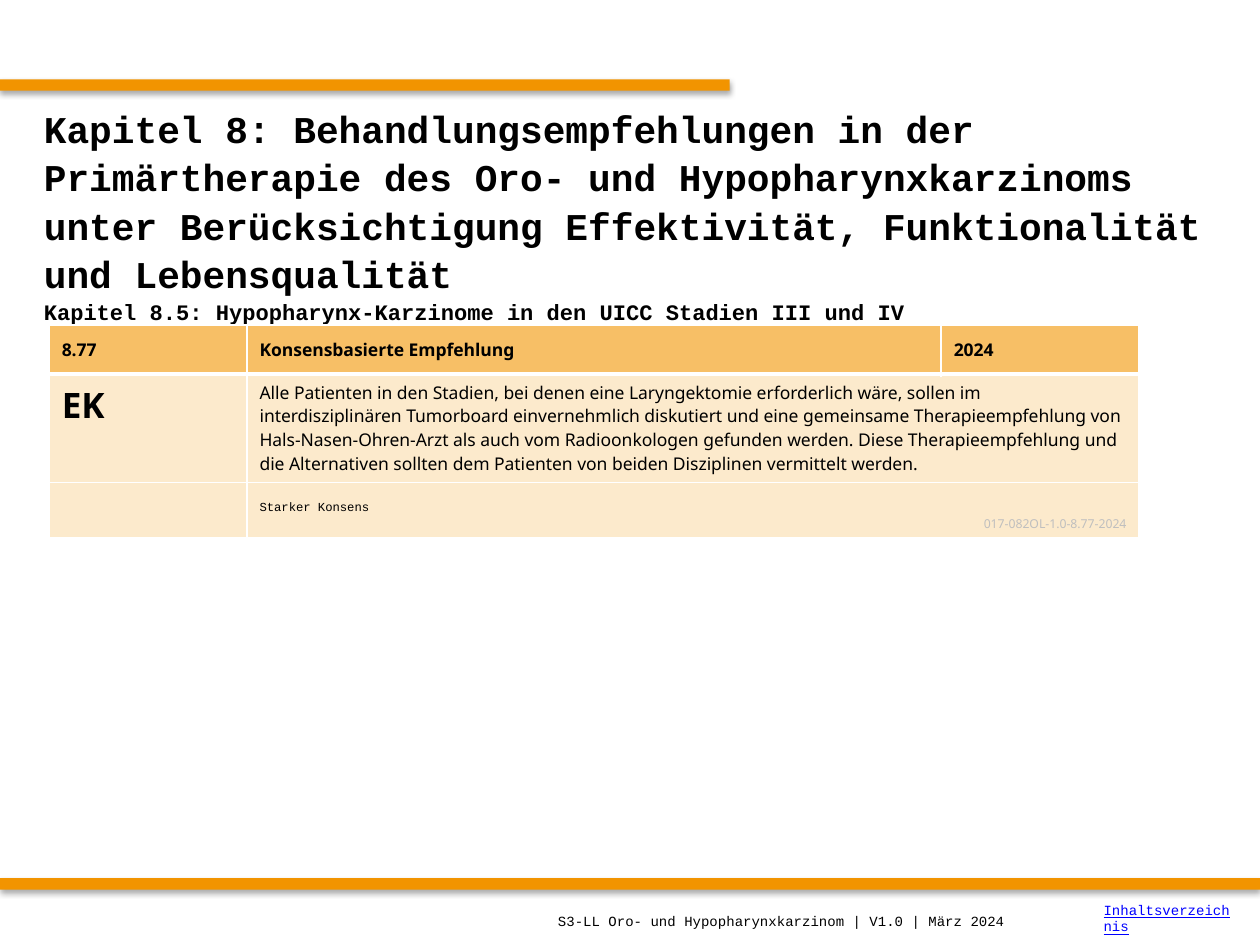
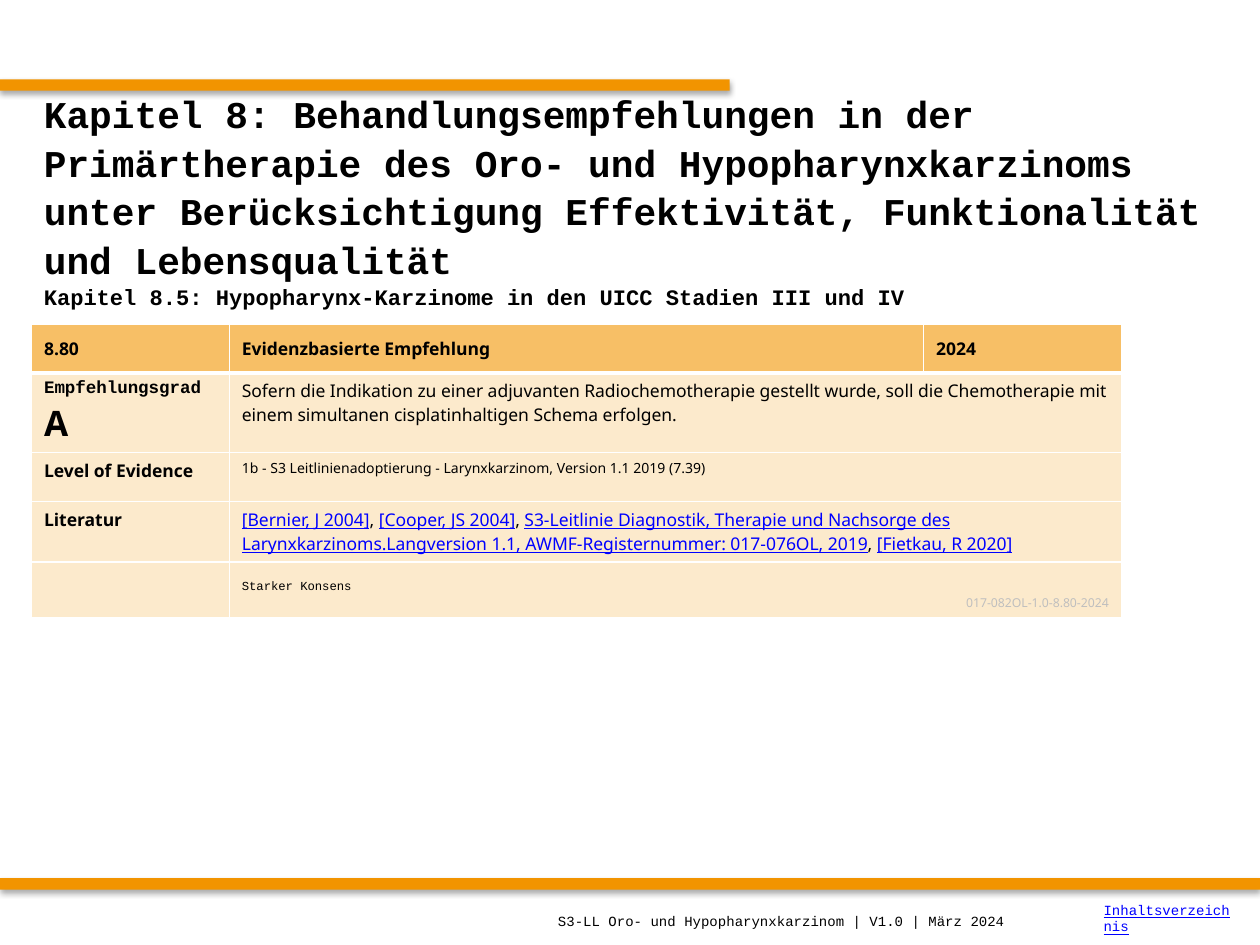
from lxml import etree
from pptx import Presentation
from pptx import util as u
from pptx.dml import color
from pptx.enum import shapes, text
from pptx.oxml import ns, parse_xml

MONO, SANS = "Courier New", "Noto Sans"
BLACK, BLUE, GREY, WHITE = "000000", "0000FF", "BFBFBF", "FFFFFF"
ORANGE, HEAD, BODY = "F29400", "F7BF66", "FCEACC"
NSMAP = 'xmlns:a="http://schemas.openxmlformats.org/drawingml/2006/main"'
SHADOW = (
    f'<a:effectLst {NSMAP}><a:outerShdw blurRad="40000" dist="23000" dir="5400000" '
    'rotWithShape="0"><a:srgbClr val="000000"><a:alpha val="35000"/></a:srgbClr>'
    '</a:outerShdw></a:effectLst>'
)


def rgb(value):
    return color.RGBColor.from_string(value)


def write(tf, paragraphs, size, font=SANS, bold=False, align=None, spacing=None):
    tf.word_wrap = True
    for i, runs in enumerate(paragraphs):
        p = tf.paragraphs[0] if i == 0 else tf.add_paragraph()
        p.alignment = align or text.PP_ALIGN.LEFT
        p.line_spacing = spacing
        for content, style in runs:
            r = p.add_run()
            r.text = content
            r.font.size = u.Pt(style.get("size", size))
            r.font.name = style.get("font", font)
            r.font.bold = style.get("bold", bold)
            r.font.underline = style.get("underline", False)
            r.font.color.rgb = rgb(style.get("color", BLACK))


LINK = {"color": BLUE, "underline": True}
LABEL = {"bold": True}
GRADE = {"bold": True, "size": 20}

CHAPTER = (
    "Kapitel 8: Behandlungsempfehlungen in der Primärtherapie des Oro- und "
    "Hypopharynxkarzinoms unter Berücksichtigung Effektivität, Funktionalität "
    "und Lebensqualität"
)
SECTION = "Kapitel 8.5: Hypopharynx-Karzinome in den UICC Stadien III und IV"
BARS = [(0.63, 5.79), (6.97, 10)]
FOOTERS = [
    (4.33, 7.11, 5.51, "S3-LL Oro- und Hypopharynxkarzinom | V1.0 | März 2024", {}),
    (8.66, 7.09, 1.22, "Inhaltsverzeichnis", LINK),
]
COLUMNS = [1.57, 5.51, 1.57]
HEAD_HEIGHT, CONSENSUS_HEIGHT = 0.39, 0.44

slides = [
    {
        "number": "8.77",
        "kind": "Konsensbasierte Empfehlung",
        "title_height": 1.73,
        "table_at": (0.39, 2.58),
        "rows": [
            (0.86, [[("EK", GRADE)]], [[(
                "Alle Patienten in den Stadien, bei denen eine Laryngektomie "
                "erforderlich wäre, sollen im interdisziplinären Tumorboard "
                "einvernehmlich diskutiert und eine gemeinsame Therapieempfehlung "
                "von Hals-Nasen-Ohren-Arzt als auch vom Radioonkologen gefunden "
                "werden. Diese Therapieempfehlung und die Alternativen sollten dem "
                "Patienten von beiden Disziplinen vermittelt werden.", {})]]),
        ],
    },
    {
        "number": "8.80",
        "kind": "Evidenzbasierte Empfehlung",
        "title_height": 1.5,
        "table_at": (0.25, 2.57),
        "rows": [
            (0.63,
             [[("Empfehlungsgrad", {"bold": True, "font": MONO})], [("A", GRADE)]],
             [[("Sofern die Indikation zu einer adjuvanten Radiochemotherapie "
                "gestellt wurde, soll die Chemotherapie mit einem simultanen "
                "cisplatinhaltigen Schema erfolgen.", {})]]),
            (0.39, [[("Level of Evidence", LABEL)]],
             [[("1b - S3 Leitlinienadoptierung - Larynxkarzinom, Version 1.1 2019 "
                "(7.39)", {"size": 8})]]),
            (0.48, [[("Literatur", LABEL)]], [[
                ("[Bernier, J 2004]", LINK),
                (", ", {}),
                ("[Cooper, JS 2004]", LINK),
                (", ", {}),
                ("S3-Leitlinie Diagnostik, Therapie und Nachsorge des "
                 "Larynxkarzinoms.Langversion 1.1, AWMF-Registernummer: "
                 "017-076OL, 2019", LINK),
                (", ", {}),
                ("[Fietkau, R 2020]", LINK),
            ]]),
        ],
    },
]

prs = Presentation()
prs.slide_width, prs.slide_height = u.Inches(10), u.Inches(7.5)

for item in slides:
    s = prs.slides.add_slide(prs.slide_layouts[6])

    for top, width in BARS:
        sp = s.shapes.add_shape(
            shapes.MSO_SHAPE.RECTANGLE, 0, u.Inches(top), u.Inches(width), u.Inches(0.09)
        )
        sp.fill.solid()
        sp.fill.fore_color.rgb = rgb(ORANGE)
        sp.line.fill.background()
        sp._element.spPr.append(parse_xml(SHADOW))

    sp = s.shapes.add_textbox(
        u.Inches(0.25), u.Inches(0.83), u.Inches(9.5), u.Inches(item["title_height"])
    )
    sp.text_frame.vertical_anchor = text.MSO_ANCHOR.MIDDLE
    title = [[(CHAPTER, {})], [(SECTION, {"size": 12.6})]]
    write(sp.text_frame, title, 21.6, MONO, bold=True, spacing=1.07)

    heights = [HEAD_HEIGHT, *(row[0] for row in item["rows"]), CONSENSUS_HEIGHT]
    left, top = item["table_at"]
    table = s.shapes.add_table(
        len(heights), len(COLUMNS), u.Inches(left), u.Inches(top),
        u.Inches(sum(COLUMNS)), u.Inches(sum(heights))
    ).table
    table.first_row = table.horz_banding = False
    for column, width in zip(table.columns, COLUMNS):
        column.width = u.Inches(width)
    for row, height in zip(table.rows, heights):
        row.height = u.Inches(height)

    for y in range(len(heights)):
        for x in range(len(COLUMNS)):
            cell = table.cell(y, x)
            tcPr = cell._tc.get_or_add_tcPr()
            for side in "LRTB":
                thick = (y, side) in [(0, "B"), (1, "T")]
                ln = etree.SubElement(tcPr, ns.qn(f"a:ln{side}"), w=str(u.Pt(3 if thick else 1)))
                fill = etree.SubElement(ln, ns.qn("a:solidFill"))
                etree.SubElement(fill, ns.qn("a:srgbClr"), val=WHITE)
            cell.fill.solid()
            cell.fill.fore_color.rgb = rgb(BODY if y else HEAD)
        if y:
            table.cell(y, 1).merge(table.cell(y, 2))

    for x, heading in enumerate([item["number"], item["kind"], "2024"]):
        cell = table.cell(0, x)
        cell.vertical_anchor = text.MSO_ANCHOR.MIDDLE
        write(cell.text_frame, [[(heading, {})]], 10, bold=True)

    for y, (height, label, content) in enumerate(item["rows"], 1):
        write(table.cell(y, 0).text_frame, label, 10)
        write(table.cell(y, 1).text_frame, content, 10)

    cell = table.cell(len(heights) - 1, 1)
    cell.vertical_anchor = text.MSO_ANCHOR.BOTTOM
    code = f"017-082OL-1.0-{item['number']}-2024"
    consensus = [[("Starker Konsens", {"font": MONO})], [(code, {"color": GREY})]]
    write(cell.text_frame, consensus, 7)
    cell.text_frame.paragraphs[1].alignment = text.PP_ALIGN.RIGHT

    for left, top, width, content, style in FOOTERS:
        sp = s.shapes.add_textbox(
            u.Inches(left), u.Inches(top), u.Inches(width), u.Inches(0.39)
        )
        sp.text_frame.vertical_anchor = text.MSO_ANCHOR.MIDDLE
        write(sp.text_frame, [[(content, style)]], 8, MONO)

prs.save("out.pptx")
